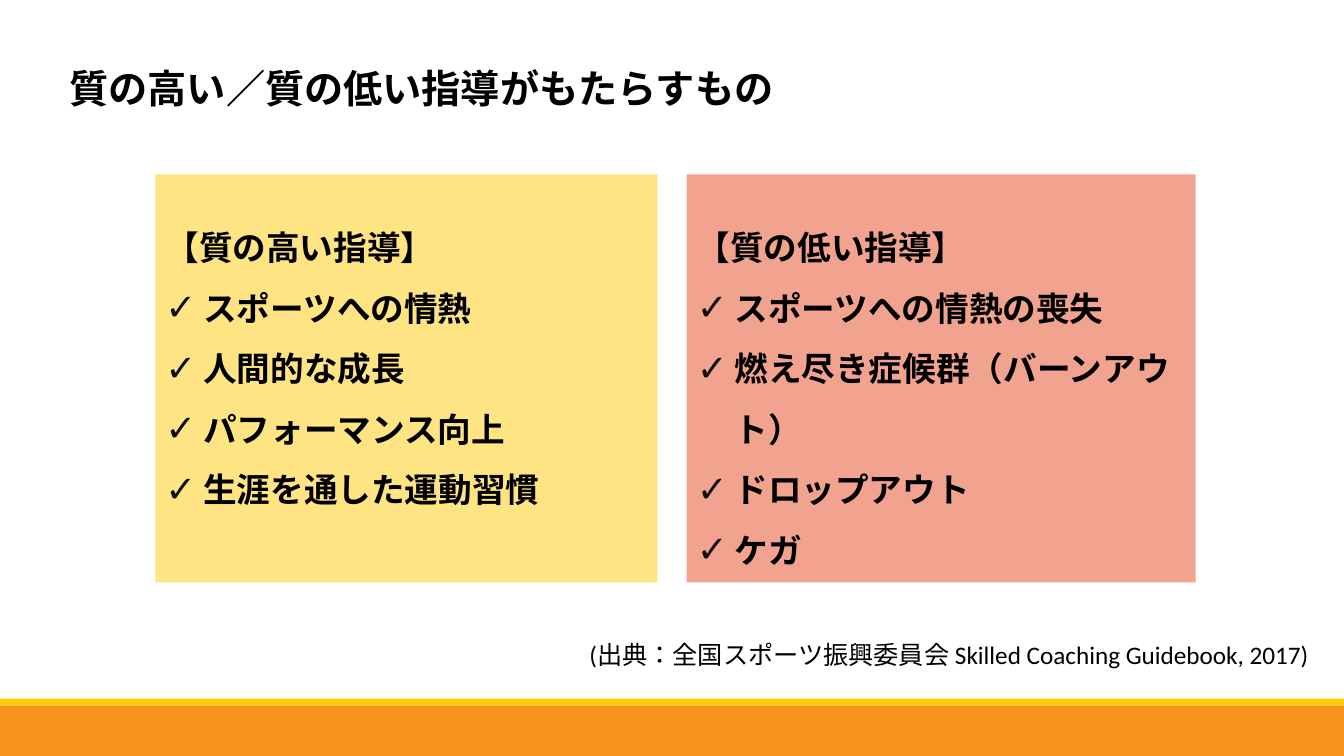
"""Build the slide comparing the outcomes of high and low quality coaching."""
from lxml import etree
from pptx import Presentation
from pptx.dml.color import RGBColor
from pptx.enum import lang, shapes, text
from pptx.oxml import ns
from pptx.util import Pt

FONT = "Calibri"
TITLE = "質の高い／質の低い指導がもたらすもの"
SOURCE = "(出典：全国スポーツ振興委員会 Skilled Coaching Guidebook, 2017)"
PANELS = [
    {"left": 111, "width": 358.5, "fill": "FFCA08", "heading": "【質の高い指導】",
     "items": ["スポーツへの情熱", "人間的な成長", "パフォーマンス向上", "生涯を通した運動習慣"]},
    {"left": 490.5, "width": 363.5, "fill": "E64823", "heading": "【質の低い指導】",
     "items": ["スポーツへの情熱の喪失", "燃え尽き症候群（バーンアウト）", "ドロップアウト", "ケガ"]},
]
BANDS = [(504, 36, "F8931D"), (499, 5, "FFCA08")]
WIDTH, HEIGHT = 960, 540
PANEL_TOP, PANEL_HEIGHT = 124.5, 291.5
INDENT = 27


def color(value):
    return RGBColor.from_string(value)


def place(shape, left, top, width, height):
    shape.left, shape.top, shape.width, shape.height = map(Pt, (left, top, width, height))


def set_fill(shape, value, alpha=None):
    shape.fill.solid()
    shape.fill.fore_color.rgb = color(value)
    if alpha:
        srgb = shape.fill._xPr.find(".//" + ns.qn("a:srgbClr"))
        etree.SubElement(srgb, ns.qn("a:alpha"), val=str(alpha * 1000))


def prepare_frame(shape, top=3.2, side=7.2):
    frame = shape.text_frame
    frame.word_wrap = True
    frame.auto_size = text.MSO_AUTO_SIZE.NONE
    frame.vertical_anchor = text.MSO_ANCHOR.TOP
    frame.margin_left = frame.margin_right = Pt(side)
    frame.margin_top, frame.margin_bottom = Pt(top), Pt(0)
    return frame


def write(paragraph, words, size, bold=False, align=text.PP_ALIGN.LEFT, spacing=1.0):
    paragraph.alignment = align
    paragraph.line_spacing = spacing
    paragraph.space_before = Pt(0)
    run = paragraph.add_run()
    run.text = words
    run.font.name, run.font.size, run.font.bold = FONT, Pt(size), bold
    run.font.language_id = lang.MSO_LANGUAGE_ID.JAPANESE
    run.font.color.rgb = color("000000")


def set_bullet(paragraph, checked):
    properties = paragraph._p.get_or_add_pPr()
    indent = Pt(INDENT) if checked else 0
    properties.set("marL", str(indent))
    properties.set("indent", str(-indent))
    if checked:
        bullet_color = etree.SubElement(properties, ns.qn("a:buClr"))
        etree.SubElement(bullet_color, ns.qn("a:srgbClr"), val="0D0D0D")
        etree.SubElement(properties, ns.qn("a:buSzPct"), val="110000")
        etree.SubElement(properties, ns.qn("a:buChar"), char="✓")
    else:
        etree.SubElement(properties, ns.qn("a:buNone"))


def fill_panel(shape, panel):
    place(shape, panel["left"], PANEL_TOP, panel["width"], PANEL_HEIGHT)
    set_fill(shape, panel["fill"], alpha=50)
    frame = prepare_frame(shape, top=23.5)
    for index, words in enumerate([panel["heading"], *panel["items"]]):
        paragraph = frame.add_paragraph() if index else frame.paragraphs[0]
        write(paragraph, words, 24, bold=True, spacing=1.5)
        set_bullet(paragraph, checked=index > 0)


def main():
    presentation = Presentation()
    presentation.slide_width, presentation.slide_height = Pt(WIDTH), Pt(HEIGHT)
    slide = presentation.slides.add_slide(presentation.slide_layouts[3])

    for top, height, fill in BANDS:
        band = slide.shapes.add_shape(shapes.MSO_SHAPE.RECTANGLE, 0, Pt(top), Pt(WIDTH), Pt(height))
        band.shadow.inherit = False
        band.line.fill.background()
        set_fill(band, fill)

    title, *bodies = slide.placeholders
    place(title, 42.5, 26, 646.5, 53)
    write(prepare_frame(title).paragraphs[0], TITLE, 28, bold=True, spacing=1.5)
    for body, panel in zip(bodies, PANELS):
        fill_panel(body, panel)

    source = slide.shapes.add_textbox(Pt(278), Pt(453.5), Pt(664), Pt(29))
    write(prepare_frame(source).paragraphs[0], SOURCE, 18, align=text.PP_ALIGN.RIGHT)

    presentation.save("out.pptx")


if __name__ == "__main__":
    main()
